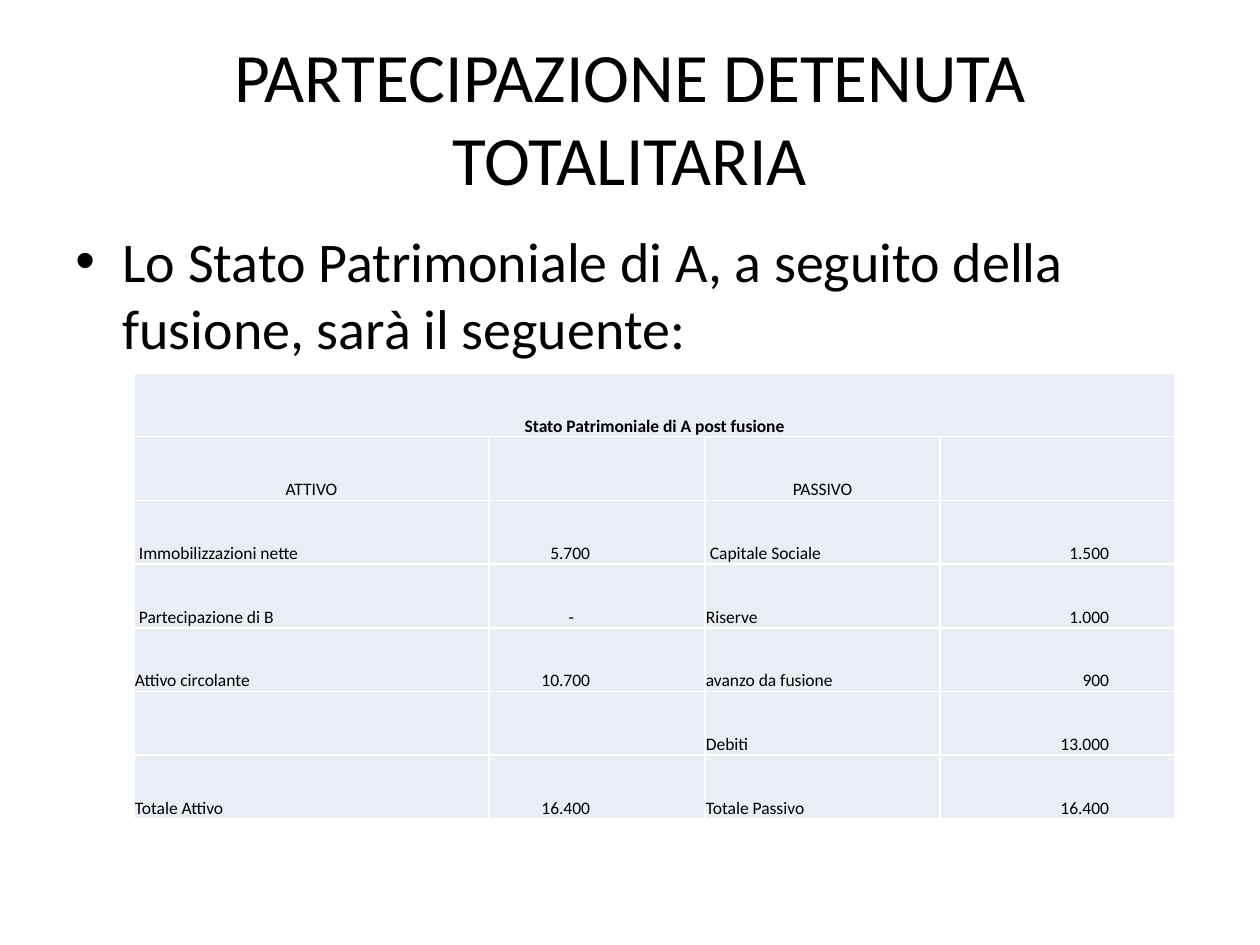
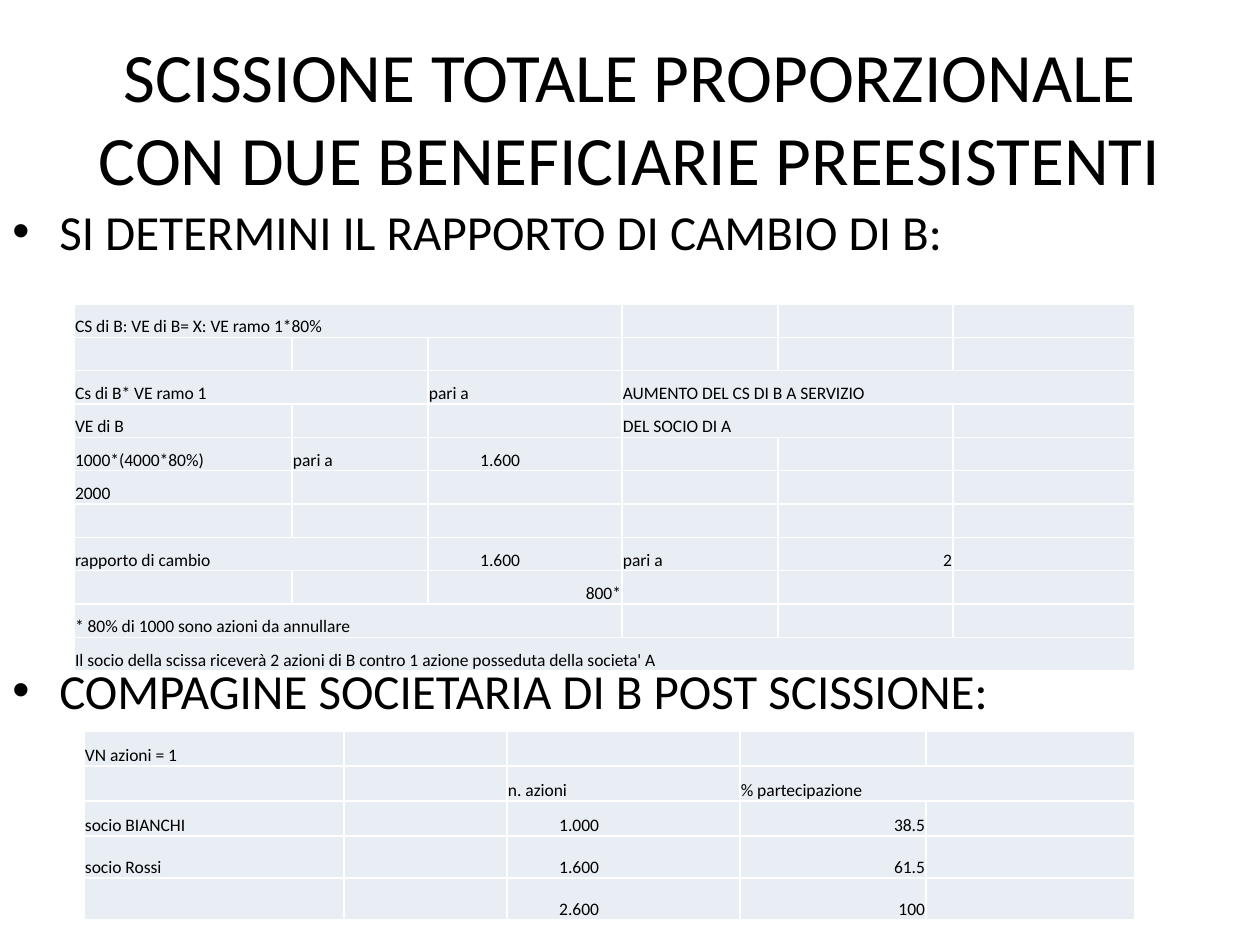
from dataclasses import dataclass
from lxml import etree
from pptx import Presentation
from pptx.dml.color import RGBColor
from pptx.enum.text import MSO_ANCHOR, PP_ALIGN
from pptx.oxml.ns import qn
from pptx.util import Emu, Pt

LEFT, CENTER, RIGHT = PP_ALIGN.LEFT, PP_ALIGN.CENTER, PP_ALIGN.RIGHT
MIDDLE, BOTTOM, TOP = MSO_ANCHOR.MIDDLE, MSO_ANCHOR.BOTTOM, MSO_ANCHOR.TOP
EMU_PER_PX = 914400 / 126


@dataclass(frozen=True)
class Theme:
    font: str = "Calibri"
    bullet_font: str = "Arial"
    ink: str = "000000"
    cell: str = "E9EDF4"
    border: str = "FFFFFF"
    title_size: float = 39.6
    table_size: int = 10
    border_width: int = 1


@dataclass(frozen=True)
class Entry:
    text: str = ""
    align: int = LEFT
    right_gap: int = 1
    bold: bool = False


THEME = Theme()
SLIDE_SIZE = (1260, 945)
TITLE_BOX = (63, 38, 1134, 157)
BULLET_INDENT = 47
MERGED = None


def figure(text, right_gap=1):
    return Entry(text, RIGHT, right_gap)


def asset(text):
    return figure(text, 115)


def liability(text):
    return figure(text, 66)


def shares(text):
    return figure(text, 102)


def holding(text):
    return figure(text, 141)


POST_MERGER_BALANCE = {
    "at": (134, 373), "height": 446,
    "columns": [355, 216, 235, 235], "row_weights": [1] * 7,
    "rows": [
        [Entry("Stato Patrimoniale di A post fusione", CENTER, bold=True), MERGED, MERGED, MERGED],
        [Entry("ATTIVO", CENTER), "", Entry("PASSIVO", CENTER), ""],
        [" Immobilizzazioni nette", asset("5.700"), " Capitale Sociale", liability("1.500")],
        [" Partecipazione di B", figure("-", 131), "Riserve", liability("1.000")],
        ["Attivo circolante", asset("10.700"), "avanzo da fusione", liability("900")],
        ["", "", "Debiti", liability("13.000")],
        ["Totale Attivo", asset("16.400"), "Totale Passivo", liability("16.400")],
    ],
}

EXCHANGE_RATIO = {
    "at": (74, 304), "height": 367,
    "columns": [218, 136, 194, 156, 175, 182], "row_weights": [1] * 11,
    "rows": [
        ["CS di B: VE di B= X: VE ramo 1*80%", MERGED, MERGED, "", "", ""],
        [""] * 6,
        ["Cs di B* VE ramo 1", MERGED, "pari a", "AUMENTO DEL CS DI B A SERVIZIO", MERGED, MERGED],
        ["VE di B", "", "", "DEL SOCIO DI A", MERGED, ""],
        ["1000*(4000*80%)", "pari a", shares("1.600"), "", "", ""],
        ["2000", "", "", "", "", ""],
        [""] * 6,
        ["rapporto di cambio", MERGED, shares("1.600"), "pari a", figure("2"), ""],
        ["", "", figure("800*"), "", "", ""],
        ["* 80% di 1000 sono azioni da annullare", MERGED, MERGED, "", "", ""],
        ["Il socio della scissa riceverà 2 azioni di B contro 1 azione posseduta della societa' A"]
        + [MERGED] * 5,
    ],
}

SHAREHOLDERS = {
    "at": (84, 731), "height": 189,
    "columns": [260, 163, 233, 186, 209], "row_weights": [35, 35, 35, 42, 42],
    "rows": [
        ["VN azioni = 1", "", "", "", ""],
        ["", "", "n. azioni", "% partecipazione", MERGED],
        ["socio BIANCHI", "", holding("1.000"), figure("38.5"), ""],
        ["socio Rossi", "", holding("1.600"), figure("61.5"), ""],
        ["", "", holding("2.600"), figure("100"), ""],
    ],
}

SLIDES = [
    {
        "title": "PARTECIPAZIONE DETENUTA TOTALITARIA",
        "body_box": (63, 220, 1134, 624), "body_size": 32, "body_gap": 0,
        "points": ["Lo Stato Patrimoniale di A, a seguito della fusione, sarà il seguente:"],
        "tables": [POST_MERGER_BALANCE],
    },
    {
        "title": "SCISSIONE TOTALE PROPORZIONALE CON DUE BENEFICIARIE PREESISTENTI",
        "body_box": (0, 195, 1245, 750), "body_size": 28, "body_gap": 400,
        "points": ["SI DETERMINI IL RAPPORTO DI CAMBIO DI B:",
                   "COMPAGINE SOCIETARIA DI B POST SCISSIONE:"],
        "tables": [EXCHANGE_RATIO, SHAREHOLDERS],
    },
]


def px(length):
    return Emu(round(length * EMU_PER_PX))


def style(paragraph, size, align=LEFT, bold=False):
    paragraph.alignment = align
    font = paragraph.font
    font.name, font.size, font.bold = THEME.font, Pt(size), bold
    font.color.rgb = RGBColor.from_string(THEME.ink)


def add_text_frame(slide, box, anchor):
    frame = slide.shapes.add_textbox(*map(px, box)).text_frame
    frame.word_wrap = True
    frame.vertical_anchor = anchor
    return frame


def add_title(slide, title):
    heading = add_text_frame(slide, TITLE_BOX, MIDDLE).paragraphs[0]
    heading.text = title
    style(heading, THEME.title_size, CENTER)


def add_points(slide, content):
    frame = add_text_frame(slide, content["body_box"], TOP)
    for index, point in enumerate(content["points"]):
        paragraph = frame.add_paragraph() if index else frame.paragraphs[0]
        paragraph.text = point
        properties = paragraph._p.get_or_add_pPr()
        properties.set("marL", str(px(BULLET_INDENT)))
        properties.set("indent", str(-px(BULLET_INDENT)))
        etree.SubElement(properties, qn("a:buFont"), typeface=THEME.bullet_font)
        etree.SubElement(properties, qn("a:buChar"), char="•")
        style(paragraph, content["body_size"])
        if index:
            paragraph.space_before = px(content["body_gap"])


def add_borders(cell):
    properties = cell._tc.get_or_add_tcPr()
    for side in ("lnL", "lnR", "lnT", "lnB"):
        line = etree.SubElement(properties, qn(f"a:{side}"), w=str(Pt(THEME.border_width)))
        fill = etree.SubElement(line, qn("a:solidFill"))
        etree.SubElement(fill, qn("a:srgbClr"), val=THEME.border)


def fill_cell(cell, entry):
    add_borders(cell)
    cell.fill.solid()
    cell.fill.fore_color.rgb = RGBColor.from_string(THEME.cell)
    cell.vertical_anchor = BOTTOM
    cell.margin_left = cell.margin_top = px(1)
    cell.margin_right, cell.margin_bottom = px(entry.right_gap), 0
    paragraph = cell.text_frame.paragraphs[0]
    paragraph.text = entry.text
    style(paragraph, THEME.table_size, entry.align, entry.bold)
    if not entry.text:
        etree.SubElement(paragraph._p, qn("a:endParaRPr"), sz=str(THEME.table_size * 100))


def add_grid(slide, content):
    rows, columns, weights = content["rows"], content["columns"], content["row_weights"]
    size = (sum(columns), content["height"])
    table = slide.shapes.add_table(len(rows), len(columns), *map(px, content["at"] + size)).table
    table.first_row = table.horz_banding = False
    for column, width in zip(table.columns, columns):
        column.width = px(width)
    for row, weight in zip(table.rows, weights):
        row.height = px(content["height"] * weight / sum(weights))
    for r, entries in enumerate(rows):
        for c, entry in enumerate(entries):
            if entry is MERGED:
                entry = ""
            fill_cell(table.cell(r, c), entry if isinstance(entry, Entry) else Entry(entry))
        starts = [c for c, entry in enumerate(entries) if entry is not MERGED]
        for start, end in zip(starts, starts[1:] + [len(entries)]):
            if end - start > 1:
                table.cell(r, start).merge(table.cell(r, end - 1))


def main():
    deck = Presentation()
    deck.slide_width, deck.slide_height = map(px, SLIDE_SIZE)
    blank = deck.slide_layouts[6]
    for content in SLIDES:
        slide = deck.slides.add_slide(blank)
        add_title(slide, content["title"])
        add_points(slide, content)
        for grid in content["tables"]:
            add_grid(slide, grid)
    deck.save("out.pptx")


if __name__ == "__main__":
    main()
